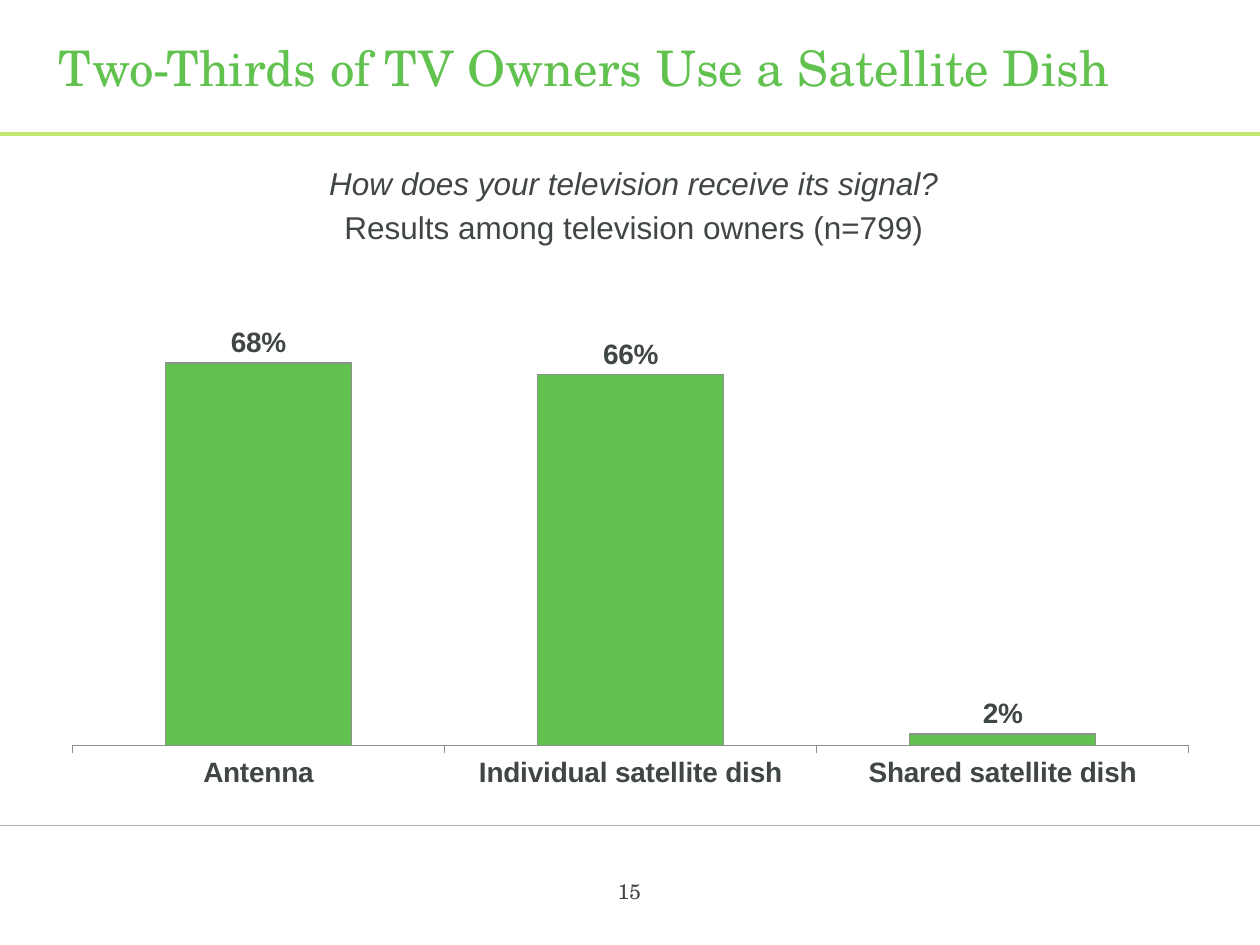
from pptx import Presentation
from pptx.chart.data import CategoryChartData
from pptx.dml.color import RGBColor
from pptx.enum.chart import XL_CHART_TYPE as ChartType, XL_LABEL_POSITION as LabelPos
from pptx.enum.chart import XL_TICK_LABEL_POSITION as TickLabel, XL_TICK_MARK as Tick
from pptx.enum.shapes import MSO_CONNECTOR as Connector
from pptx.enum.text import MSO_ANCHOR as Anchor, PP_ALIGN as Align
from pptx.oxml import parse_xml
from pptx.oxml.ns import nsdecls
from pptx.util import Inches, Pt

GREEN, LIME, DARK, GRAY, PALE = "61C250", "C3E76F", "404545", "8E908F", "B5B6B3"
SERIF, SANS = "TeX Gyre Schola", "Arial"


def paint(color_format, color):
    """Set a hex colour on a font colour, fill colour or line colour."""
    color_format.rgb = RGBColor.from_string(color)


def style_font(font, size, color=DARK, name=SANS, bold=False, italic=False):
    """Apply typeface, size, colour and emphasis to a font."""
    font.name, font.size, font.bold, font.italic = name, Pt(size), bold, italic
    paint(font.color, color)


def add_text(slide, box, lines, align=Align.LEFT, anchor=Anchor.TOP, gap=0, italics=(), **style):
    """Add a text box with one paragraph per line."""
    frame = slide.shapes.add_textbox(*map(Inches, box)).text_frame
    frame.word_wrap = True
    frame.vertical_anchor = anchor
    for number, line in enumerate(lines):
        paragraph = frame.add_paragraph() if number else frame.paragraphs[0]
        paragraph.alignment = align
        if number:
            paragraph.space_before = Pt(gap)
        run = paragraph.add_run()
        run.text = line
        style_font(run.font, italic=number in italics, **style)


def add_rule(slide, y, color, width):
    """Draw a horizontal rule across the whole slide."""
    rule = slide.shapes.add_connector(Connector.STRAIGHT, 0, Inches(y), Inches(10), Inches(y))
    paint(rule.line.color, color)
    rule.line.width = Pt(width)
    rule._element.spPr.append(parse_xml(f"<a:effectLst {nsdecls('a')}/>"))


def place_plot(chart, x, y, w, h):
    """Fix the inner plot area as fractions of the chart."""
    plot_area = chart._chartSpace.chart.plotArea
    for layout in plot_area.xpath("c:layout"):
        plot_area.remove(layout)
    sizes = "".join(f'<c:{tag} val="{value}"/>' for tag, value in zip("xywh", (x, y, w, h)))
    plot_area.insert(0, parse_xml(
        f'<c:layout {nsdecls("c")}><c:manualLayout><c:layoutTarget val="inner"/>'
        f'<c:xMode val="edge"/><c:yMode val="edge"/>{sizes}</c:manualLayout></c:layout>'))


def add_signal_chart(slide, box, shares):
    """Add the column chart of television signal sources."""
    data = CategoryChartData(number_format="0%")
    data.categories = list(shares)
    data.add_series("Series 1", list(shares.values()))
    chart = slide.shapes.add_chart(ChartType.COLUMN_CLUSTERED, *map(Inches, box), data).chart
    chart.has_legend = chart.has_title = False
    style_font(chart.font, 10)
    place_plot(chart, 0.02, 0.045, 0.96, 0.86)

    share_axis = chart.value_axis
    share_axis.minimum_scale, share_axis.maximum_scale = 0, 0.8
    share_axis.has_major_gridlines = False
    share_axis.tick_label_position = TickLabel.NONE
    share_axis.visible = False

    source_axis = chart.category_axis
    source_axis.major_tick_mark = Tick.OUTSIDE
    paint(source_axis.format.line.color, GRAY)
    source_axis.format.line.width = Pt(0.75)
    style_font(source_axis.tick_labels.font, 16, bold=True)

    columns = chart.plots[0]
    columns.gap_width = 100
    columns.vary_by_categories = False
    bars = columns.series[0]
    bars.format.fill.solid()
    paint(bars.format.fill.fore_color, GREEN)
    paint(bars.format.line.color, GRAY)
    bars.format.line.width = Pt(0.75)

    labels = bars.data_labels
    labels.show_value = True
    labels.number_format, labels.number_format_is_linked = "0%", False
    labels.position = LabelPos.OUTSIDE_END
    style_font(labels.font, 16, bold=True)


def main():
    """Build the slide and save it."""
    deck = Presentation()
    deck.slide_width, deck.slide_height = Inches(10), Inches(7.5)
    slide = deck.slides.add_slide(deck.slide_layouts[6])
    add_rule(slide, 6.55, PALE, 0.25)
    add_rule(slide, 1.06, LIME, 2.25)
    add_text(slide, (0.37, 0.21, 9.36, 0.64), ["Two-Thirds of TV Owners Use a Satellite Dish"],
             anchor=Anchor.MIDDLE, size=28, color=GREEN, name=SERIF)
    add_text(slide, (3.83, 6.92, 2.33, 0.52), ["15"], align=Align.CENTER, size=12, name=SERIF)
    add_signal_chart(slide, (0.39, 2.16, 9.23, 4.15), {
        "Antenna": 0.68, "Individual satellite dish": 0.66, "Shared satellite dish": 0.02})
    add_text(slide, (0.37, 1.25, 9.32, 0.91),
             ["How does your television receive its signal?",
              "Results among television owners (n=799)"],
             align=Align.CENTER, gap=4, italics=(0,), size=18)
    deck.save("out.pptx")


if __name__ == "__main__":
    main()
